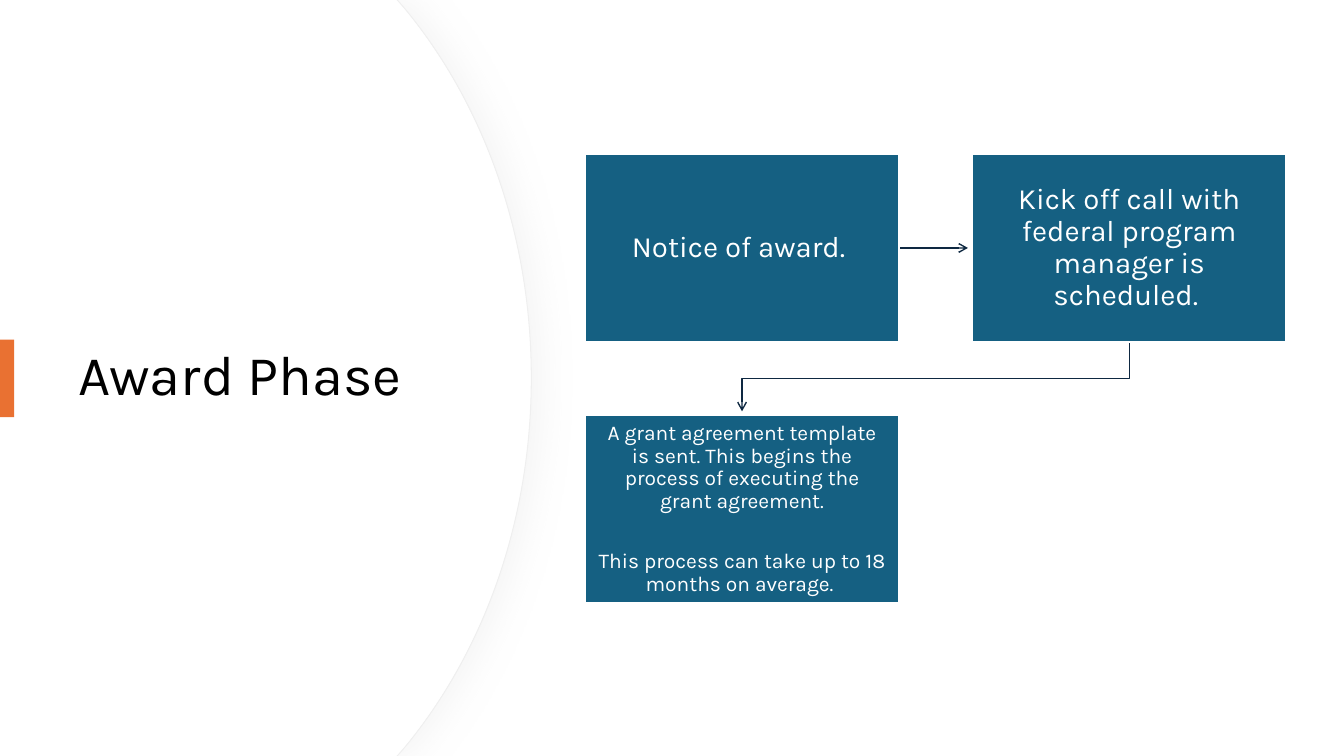
import pptx
import pptx.dml.color
import pptx.enum.shapes
import pptx.enum.text
import pptx.oxml
import pptx.oxml.ns
import pptx.util

Inches, Pt = pptx.util.Inches, pptx.util.Pt
RGBColor = pptx.dml.color.RGBColor
RECTANGLE = pptx.enum.shapes.MSO_SHAPE.RECTANGLE
MIDDLE = pptx.enum.text.MSO_ANCHOR.MIDDLE
ALIGN = pptx.enum.text.PP_ALIGN

WHITE = RGBColor(0xFF, 0xFF, 0xFF)
BLACK = RGBColor(0x00, 0x00, 0x00)
RIM = RGBColor(0xEF, 0xEF, 0xEF)
ORANGE = RGBColor(0xE9, 0x71, 0x32)
TEAL = RGBColor(0x15, 0x60, 0x82)
NAVY = RGBColor(0x0E, 0x28, 0x41)
FONT = "Karla"

TITLE = "Award Phase"
# column, row, text size, paragraphs
STEPS = [
    (0, 0, 21, ["Notice of award. "]),
    (1, 0, 21, ["Kick off call with federal program manager is scheduled. "]),
    (0, 1, 15, ["A grant agreement template is sent. This begins the process "
                "of executing the grant agreement.",
                "This process can take up to 18 months on average. "]),
]

PAGE_WIDTH, PAGE_HEIGHT = 13.33, 7.5
GRID_LEFT, GRID_TOP = 5.8, 1.53
BOX_WIDTH, BOX_HEIGHT = 3.12, 1.86
COLUMN_STEP, ROW_STEP = 3.84, 2.59
ARROW_GAP = 0.04
PARAGRAPH_GAP = 26.7

NAMESPACE = pptx.oxml.ns.nsdecls("a")
SHADOW = ('<a:effectLst %s><a:outerShdw blurRad="304800" dist="88900" dir="0">'
          '<a:srgbClr val="D9D9D9"><a:alpha val="25000"/></a:srgbClr>'
          '</a:outerShdw></a:effectLst>' % NAMESPACE)
NO_EFFECT = "<a:effectLst %s/>" % NAMESPACE
ARROWHEAD = '<a:tailEnd %s type="arrow"/>' % NAMESPACE


def add_outline(page, points, close):
    points = [(Inches(x), Inches(y)) for x, y in points]
    builder = page.shapes.build_freeform(*points[0], scale=1.0)
    builder.add_line_segments(points[1:], close=close)
    shape = builder.convert_to_shape()
    shape.shadow.inherit = False
    return shape


def bend(segment, *points):
    """Turn a straight outline segment into a cubic curve."""
    marks = "".join('<a:pt x="%d" y="%d"/>' % (Inches(x), Inches(y)) for x, y in points)
    curve = pptx.oxml.parse_xml("<a:cubicBezTo %s>%s</a:cubicBezTo>" % (NAMESPACE, marks))
    segment.getparent().replace(segment, curve)


def add_panel(page, right):
    """White panel whose right edge bulges out to the given position."""
    corner, shoulder, middle = right - 1.33, right - 1.26, PAGE_HEIGHT / 2
    upper = [(shoulder, 0.08), (right - 0.48, 1.02), (right, 2.32), (right, middle)]
    lower = [(x, PAGE_HEIGHT - y) for x, y in reversed(upper)]
    panel = add_outline(page, [(0, 0), (corner, 0), upper[0], upper[-1], lower[-1],
                               (corner, PAGE_HEIGHT), (0, PAGE_HEIGHT)], True)
    segments = list(panel.element.iter(pptx.oxml.ns.qn("a:lnTo")))
    bend(segments[2], *upper[1:])
    bend(segments[3], *lower[1:])
    panel.fill.solid()
    panel.fill.fore_color.rgb = WHITE
    panel.line.fill.background()
    return panel


def add_rectangle(page, left, top, width, height, color):
    shape = page.shapes.add_shape(RECTANGLE, Inches(left), Inches(top),
                                  Inches(width), Inches(height))
    shape.shadow.inherit = False
    shape.fill.solid()
    shape.fill.fore_color.rgb = color
    shape.line.fill.background()
    return shape


def add_span(para, text, size, color):
    para.line_spacing = 0.9
    span = para.add_run()
    span.text = text
    span.font.name = FONT
    span.font.size = Pt(size)
    span.font.color.rgb = color


def add_step(page, column, row, size, texts):
    box = add_rectangle(page, GRID_LEFT + column * COLUMN_STEP, GRID_TOP + row * ROW_STEP,
                        BOX_WIDTH, BOX_HEIGHT, TEAL)
    box.line.color.rgb = WHITE
    box.line.width = Pt(1.5)
    frame = box.text_frame
    frame.word_wrap = True
    frame.vertical_anchor = MIDDLE
    frame.margin_left = frame.margin_right = Inches(0.13)
    frame.margin_top = frame.margin_bottom = Inches(0.14)
    for number, text in enumerate(texts):
        para = frame.add_paragraph() if number else frame.paragraphs[0]
        para.alignment = ALIGN.CENTER
        if number:
            para.space_before = Pt(PARAGRAPH_GAP)
        add_span(para, text, size, WHITE)
    return box


def style_arrow(arrow, box):
    """Format an arrow and put it behind the box it starts from."""
    arrow.line.color.rgb = NAVY
    arrow.line.width = Pt(1)
    arrow.line._get_or_add_ln().append(pptx.oxml.parse_xml(ARROWHEAD))
    box.element.addprevious(arrow.element)


def main():
    deck = pptx.Presentation()
    deck.slide_width, deck.slide_height = Inches(PAGE_WIDTH), Inches(PAGE_HEIGHT)
    page = deck.slides.add_slide(deck.slide_layouts[5])

    rim = add_panel(page, 5.27)
    rim.line.color.rgb = RIM
    rim.line.width = Pt(0.75)
    properties = rim.element.spPr
    properties.replace(properties.find(pptx.oxml.ns.qn("a:effectLst")),
                       pptx.oxml.parse_xml(SHADOW))
    panel = add_panel(page, 5.26)

    title = page.shapes.title
    panel.element.addnext(title.element)
    title.left, title.top = Inches(0.68), Inches(1.27)
    title.width, title.height = Inches(3.94), Inches(4.95)
    title.text_frame.word_wrap = True
    title.text_frame.vertical_anchor = MIDDLE
    heading = title.text_frame.paragraphs[0]
    heading.alignment = ALIGN.LEFT
    add_span(heading, TITLE, 40, BLACK)

    add_rectangle(page, 0, 3.37, 0.14, 0.77, ORANGE)
    boxes = [add_step(page, *step) for step in STEPS]

    box_right, box_middle = GRID_LEFT + BOX_WIDTH, GRID_TOP + BOX_HEIGHT / 2
    across = page.shapes.add_connector(
        pptx.enum.shapes.MSO_CONNECTOR.STRAIGHT, Inches(box_right), Inches(box_middle),
        Inches(GRID_LEFT + COLUMN_STEP - ARROW_GAP), Inches(box_middle))
    across.begin_connect(boxes[0], 3)
    style_arrow(across, boxes[0])
    across.element.spPr.append(pptx.oxml.parse_xml(NO_EFFECT))

    first_center = GRID_LEFT + BOX_WIDTH / 2
    second_center = first_center + COLUMN_STEP
    row_bottom, next_row = GRID_TOP + BOX_HEIGHT, GRID_TOP + ROW_STEP
    turn = (row_bottom + next_row) / 2
    down = add_outline(page, [(second_center, row_bottom), (second_center, turn),
                              (first_center, turn), (first_center, next_row - ARROW_GAP)],
                       False)
    down.fill.background()
    style_arrow(down, boxes[1])

    deck.save("out.pptx")


if __name__ == "__main__":
    main()
